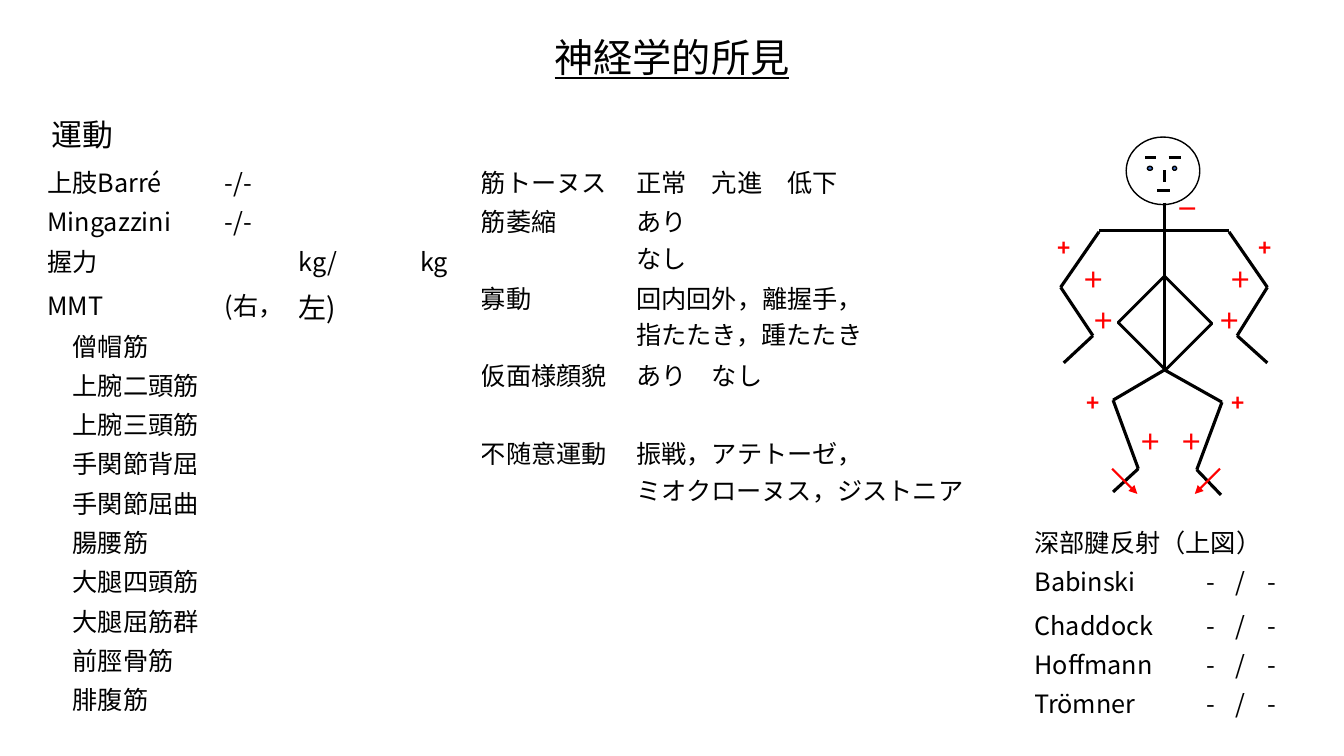
from dataclasses import dataclass
from itertools import pairwise

from lxml import etree
from pptx import Presentation
from pptx.dml.color import RGBColor
from pptx.enum.shapes import MSO_CONNECTOR, MSO_SHAPE
from pptx.enum.text import MSO_ANCHOR, MSO_AUTO_SIZE, PP_ALIGN
from pptx.oxml.ns import qn
from pptx.util import Inches, Pt

OVAL, LINE = MSO_SHAPE.OVAL, MSO_CONNECTOR.STRAIGHT
LEFT, MID = PP_ALIGN.LEFT, PP_ALIGN.CENTER
CENTER, TOP = MSO_ANCHOR.MIDDLE, MSO_ANCHOR.TOP
GROW, FIXED = MSO_AUTO_SIZE.SHAPE_TO_FIT_TEXT, MSO_AUTO_SIZE.NONE
FACE = "Noto Sans CJK JP"
HEX = {"ink": "000000", "paper": "FFFFFF", "mark": "FF0000", "eye": "4472C4"}
SIDES = ("margin_left", "margin_top", "margin_right", "margin_bottom")
PLAIN = {"first_row": False, "horz_banding": False}
Point = tuple[float, float]


@dataclass
class Label:
    text: str
    at: tuple[float, float, float, float]
    size: int
    color: str = "ink"
    bold: bool = False
    under: bool = False
    align: PP_ALIGN = MID
    anchor: MSO_ANCHOR = TOP
    fit: MSO_AUTO_SIZE = GROW
    wrap: bool = True


@dataclass
class Grid:
    at: tuple[float, float, float, float]
    cols: list[float]
    rows: list[float]
    cells: list[list[str]]
    spans: tuple[int, ...] = ()    # rows whose second part runs to the end
    start: int = 1                 # first column of a span
    mids: tuple[int, ...] = ()     # centred columns


@dataclass
class Disc:
    at: tuple[float, float, float, float]
    fill: str


def color(name: str) -> RGBColor:
    return RGBColor.from_string(HEX[name])


def assign(target, values: dict) -> None:
    for key, value in values.items():
        setattr(target, key, value)


def style(para, size: int, tint: str = "ink", bold: bool = False,
          under: bool = False) -> None:
    for run in para.runs:
        assign(run.font, {"name": FACE, "size": Pt(size), "bold": bold,
                          "underline": under})
        run.font.color.rgb = color(tint)
        etree.SubElement(run.font._element, qn("a:ea"), typeface=FACE)


def write(slide, label: Label) -> None:
    box = slide.shapes.add_textbox(*map(Inches, label.at))
    frame = box.text_frame
    assign(frame, {"text": label.text, "word_wrap": label.wrap,
                   "auto_size": label.fit, "vertical_anchor": label.anchor})
    assign(frame, dict.fromkeys(SIDES, Inches(0.05)))
    para = frame.paragraphs[0]
    para.alignment = label.align
    style(para, label.size, label.color, label.bold, label.under)


def edge(cell) -> None:
    props = cell._tc.get_or_add_tcPr()
    for place, tag in enumerate(("a:lnL", "a:lnR", "a:lnT", "a:lnB")):
        line = etree.Element(qn(tag), w=str(Pt(1)))
        fill = etree.SubElement(line, qn("a:solidFill"))
        etree.SubElement(fill, qn("a:srgbClr"), val=HEX["paper"])
        props.insert(place, line)


def draw_grid(slide, grid: Grid) -> None:
    frame = slide.shapes.add_table(len(grid.rows), len(grid.cols),
                                   *map(Inches, grid.at))
    table = frame.table
    assign(table, PLAIN)
    for col, width in zip(table.columns, grid.cols):
        col.width = Inches(width)
    for row, height in zip(table.rows, grid.rows):
        row.height = Inches(height)
    for y, texts in enumerate(grid.cells):
        for x, text in enumerate(texts):
            table.cell(y, x).text = text
    for y in range(len(grid.rows)):
        for x in range(len(grid.cols)):
            cell = table.cell(y, x)
            assign(cell, dict.fromkeys(SIDES, 0))
            cell.fill.background()
            edge(cell)
            para = cell.text_frame.paragraphs[0]
            para.alignment = MID if x in grid.mids and y not in grid.spans else LEFT
            style(para, 20 if cell.text == "左)" else 18)
    for y in grid.spans:
        table.cell(y, grid.start).merge(table.cell(y, len(grid.cols) - 1))
    frame.width, frame.height = map(Inches, grid.at[2:])


def draw_line(shapes, start: Point, end: Point, tint: str = "ink",
              width: float = 2.25, arrow: bool = False) -> None:
    line = shapes.add_connector(LINE, *map(Inches, (*start, *end)))
    line.line.color.rgb = color(tint)
    line.line.width = Pt(width)
    if arrow:
        etree.SubElement(line.line._get_or_add_ln(), qn("a:tailEnd"), type="triangle")
    etree.SubElement(line._element.spPr, qn("a:effectLst"))


def draw_disc(shapes, disc: Disc) -> None:
    shape = shapes.add_shape(OVAL, *map(Inches, disc.at))
    shape.shadow.inherit = False
    shape.fill.solid()
    shape.fill.fore_color.rgb = color(disc.fill)
    shape.line.color.rgb = color("ink")
    shape.line.width = Pt(1)


def draw_trunk(shapes, points: list[Point]) -> None:
    first, *rest = [(Inches(x), Inches(y)) for x, y in points]
    pen = shapes.build_freeform(*first)
    pen.add_line_segments(rest, close=True)
    shape = pen.convert_to_shape()
    shape.shadow.inherit = False
    shape.fill.background()
    shape.line.color.rgb = color("ink")
    shape.line.width = Pt(2)


# Tables
MUSCLES = ["僧帽筋", "上腕二頭筋", "上腕三頭筋", "手関節背屈", "手関節屈曲",
           "腸腰筋", "大腿四頭筋", "大腿屈筋群", "前脛骨筋", "腓腹筋"]
SIGNS = ["Babinski", "Chaddock", "Hoffmann", "Trömner"]
STEP = 0.39
GRIDS = [
    Grid((0.47, 1.62, 4.08, 5.61), [1.76, 0.73, 0.52, 0.69, 0.37],
         [STEP] * 2 + [0.44] + [STEP] * 11,
         [["上肢Barré", "-/-"], ["Mingazzini", "-/-"],
          ["握力", "", "kg/", "", "kg"], ["MMT", "(右，", "左)"],
          *[["　" + name] for name in MUSCLES]], spans=(0, 1)),
    Grid((4.77, 1.62, 5.29, 4.25), [1.54, 3.48],
         [STEP, 0.76, 0.76] + [STEP] * 4,
         [["筋トーヌス", "正常　亢進　低下"], ["筋萎縮", "あり\vなし"],
          ["寡動", "回内回外，離握手，\v指たたき，踵たたき"],
          ["仮面様顔貌", "あり　なし"], [],
          ["不随意運動", "振戦，アテトーゼ，\vミオクローヌス，ジストニア"]]),
    Grid((10.26, 5.19, 2.62, 2), [1.54, 0.41, 0.19, 0.43],
         [STEP, 0.43] + [STEP] * 3,
         [["深部腱反射（上図）"], *[[sign, "-", "/", "-"] for sign in SIGNS]],
         spans=(0,), start=0, mids=(1, 2, 3)),
]

# Headings and reflex marks
HEADS = [
    Label("運動", (0.45, 1.1, 0.73, 0.56), 22, wrap=False),
    Label("神経学的所見", (5.03, 0.1, 3.27, 0.92), 28, under=True,
          anchor=CENTER, fit=FIXED),
]
MARKS = [
    ("+", 10.41, 2.27, 0.29, MID), ("+", 12.43, 2.27, 0.29, LEFT),
    ("＋", 10.66, 2.59, 0.38, MID), ("＋", 12.14, 2.59, 0.38, LEFT),
    ("＋", 10.76, 3, 0.38, MID), ("＋", 12.01, 3, 0.38, MID),
    ("+", 10.7, 3.81, 0.29, MID), ("+", 12.13, 3.81, 0.29, MID),
    ("＋", 11.25, 4.2, 0.23, MID), ("＋", 11.66, 4.2, 0.26, MID),
    ("－", 11.55, 1.89, 0.46, MID),
]
ARROWS = [((11.03, 4.65), (11.28, 4.9)), ((12.1, 4.65), (11.85, 4.9))]

# Stick figure
DISCS = [Disc((11.17, 1.36, 0.73, 0.67), "paper"),
         Disc((11.38, 1.65, 0.05, 0.04), "eye"),
         Disc((11.63, 1.65, 0.04, 0.04), "eye")]
TRUNK = [(11.09, 3.2), (11.55, 2.74), (12.02, 3.21), (11.56, 3.67)]
CHAINS = [
    [(11.36, 1.56), (11.47, 1.56)],    # brows
    [(11.59, 1.56), (11.71, 1.56)],
    [(11.55, 1.69), (11.55, 1.81)],    # nose
    [(11.48, 1.89), (11.6, 1.89)],     # mouth
    [(11.55, 2.01), (11.55, 3.66)],    # spine
    [(11.55, 2.78), (11.55, 3.64)],
    [(10.9, 2.29), (12.19, 2.29)],     # shoulders
    [(10.9, 2.3), (10.52, 2.85), (10.84, 3.33), (10.55, 3.6)],    # arms
    [(12.19, 2.3), (12.57, 2.85), (12.27, 3.33), (12.57, 3.6)],
    [(11.55, 3.67), (11.04, 3.97), (11.29, 4.65), (11.04, 4.88)],    # legs
    [(11.55, 3.67), (12.12, 3.99), (11.87, 4.66), (12.11, 4.91)],
]


def main() -> None:
    deck = Presentation()
    assign(deck, {"slide_width": Inches(13.33), "slide_height": Inches(7.5)})
    slide = deck.slides.add_slide(deck.slide_layouts[6])
    for grid in GRIDS:
        draw_grid(slide, grid)
    for head in HEADS:
        write(slide, head)
    body = slide.shapes.add_group_shape().shapes
    for disc in DISCS:
        draw_disc(body, disc)
    draw_trunk(body, TRUNK)
    for chain in CHAINS:
        for start, end in pairwise(chain):
            draw_line(body, start, end)
    for text, x, y, width, align in MARKS:
        write(slide, Label(text, (x, y, width, 0.43), 16, "mark", True, align=align))
    for start, end in ARROWS:
        draw_line(slide.shapes, start, end, "mark", 1.5, True)
    deck.save("out.pptx")


if __name__ == "__main__":
    main()
